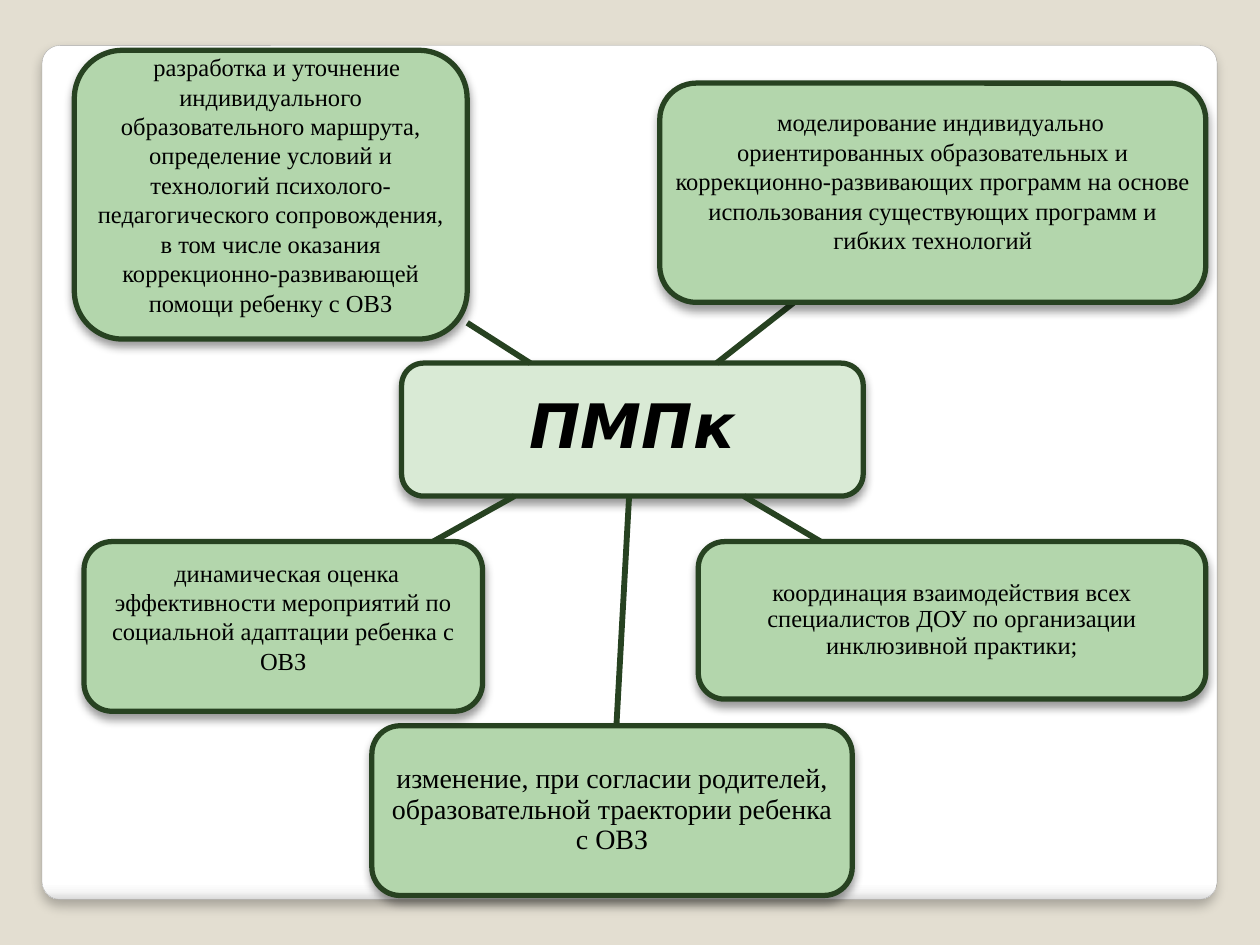
from dataclasses import dataclass

from lxml import etree
from pptx import Presentation
from pptx.dml.color import RGBColor
from pptx.enum.shapes import MSO_CONNECTOR, MSO_SHAPE
from pptx.enum.text import MSO_ANCHOR, PP_ALIGN
from pptx.oxml.ns import qn
from pptx.util import Pt

ROUNDED = MSO_SHAPE.ROUNDED_RECTANGLE
STRAIGHT = MSO_CONNECTOR.STRAIGHT
MIDDLE = MSO_ANCHOR.MIDDLE
CENTER = PP_ALIGN.CENTER


@dataclass(frozen=True)
class Theme:
    background: RGBColor = RGBColor.from_string("E3DED1")
    panel_line: RGBColor = RGBColor.from_string("A4A4A4")
    center: RGBColor = RGBColor.from_string("D9EAD5")
    task: RGBColor = RGBColor.from_string("B3D6AC")
    line: RGBColor = RGBColor.from_string("274221")
    text: RGBColor = RGBColor.from_string("000000")
    panel_stops: tuple = ((0, "FFFFFF"), (98, "FFFFFF"), (99, "F7F7F7"), (100, "DADADA"))
    title_font: str = "DejaVu Sans"
    body_font: str = "Times New Roman"
    title_size: int = 35
    body_size: int = 14
    large_size: int = 16


theme = Theme()


def add_box(left, top, width, height, line, line_width, alpha, blur, dist):
    """Add a rounded box with an outline and a soft shadow below it."""
    sp = slide.shapes.add_shape(ROUNDED, Pt(left), Pt(top), Pt(width), Pt(height))
    sp.line.color.rgb = line
    sp.line.width = Pt(line_width)
    sp.shadow.inherit = False
    effects = sp._element.spPr.find(qn("a:effectLst"))
    shadow = etree.SubElement(effects, qn("a:outerShdw"), blurRad=str(Pt(blur)),
                              dist=str(Pt(dist)), dir="5400000", rotWithShape="0")
    color = etree.SubElement(shadow, qn("a:srgbClr"), val="000000")
    etree.SubElement(color, qn("a:alpha"), val=str(alpha * 1000))
    return sp


def set_text(sp, text, font, size, spacing=1.0, indent=0, bottom=3):
    """Put one centred paragraph into a box."""
    tf = sp.text_frame
    tf.word_wrap = True
    tf.vertical_anchor = MIDDLE
    tf.margin_left = tf.margin_right = tf.margin_top = Pt(2.5)
    tf.margin_bottom = Pt(bottom)
    p = tf.paragraphs[0]
    p.text = text
    p.alignment = CENTER
    p.line_spacing = spacing
    if indent:
        p._p.get_or_add_pPr().set("indent", str(Pt(indent)))
    r = p.runs[0]
    r.font.name = font
    r.font.size = Pt(size)
    r.font.color.rgb = theme.text
    return r


prs = Presentation()
prs.slide_width, prs.slide_height = Pt(720), Pt(540)
slide = prs.slides.add_slide(prs.slide_layouts[6])
slide.background.fill.solid()
slide.background.fill.fore_color.rgb = theme.background

# White panel, shaded along its bottom edge
panel = add_box(24, 26, 671.5, 488, theme.panel_line, 0.16, 25, 6, 4)
panel.adjustments[0] = 0.021
panel.fill.gradient()
panel.fill.gradient_angle = 270
stops = panel._element.spPr.find(qn("a:gradFill")).find(qn("a:gsLst"))
for stop in list(stops):
    stops.remove(stop)
for position, value in theme.panel_stops:
    stop = etree.SubElement(stops, qn("a:gs"), pos=str(position * 1000))
    etree.SubElement(stop, qn("a:srgbClr"), val=value)

# Central box
center = add_box(229.5, 207.5, 263.75, 76, theme.line, 3, 40, 5.2, 3)
center.fill.solid()
center.fill.fore_color.rgb = theme.center
r = set_text(center, "ПМПк", theme.title_font, theme.title_size, spacing=0.9)
r.font.bold = r.font.italic = True

# Spokes from the central box to the tasks
spokes = [
    (303, 207.5, 267, 184.5),
    (409.5, 207.5, 453.5, 173),
    (425, 283.5, 469, 309.5),
    (359.5, 283.5, 352.25, 414.75),
    (294, 283.5, 247.5, 309.5),
]
for x1, y1, x2, y2 in spokes:
    spoke = slide.shapes.add_connector(STRAIGHT, Pt(x1), Pt(y1), Pt(x2), Pt(y2))
    spoke.line.color.rgb = theme.line
    spoke.line.width = Pt(3.35)
    etree.SubElement(spoke._element.spPr, qn("a:effectLst"))

# Task boxes: position, text, size, line spacing, first-line indent, bottom margin
tasks = [
    ((42.5, 28.75, 224.5, 165),
     "разработка и уточнение индивидуального образовательного маршрута, определение "
     "условий и технологий психолого-педагогического сопровождения, в том числе "
     "оказания коррекционно-развивающей помощи ребенку с ОВЗ",
     theme.body_size, 1.0, 7, 14),
    ((377, 47.5, 312, 125.25),
     "моделирование индивидуально ориентированных образовательных и "
     "коррекционно-развивающих программ на основе использования существующих "
     "программ и гибких технологий",
     theme.body_size, 1.0, 9, 16),
    ((399, 309.5, 290, 90),
     "координация взаимодействия всех специалистов ДОУ по организации "
     "инклюзивной практики;",
     theme.body_size, 0.9, 0, 3),
    ((212.5, 414.75, 274.5, 97),
     "изменение, при согласии родителей, образовательной траектории ребенка с ОВЗ",
     theme.large_size, 0.9, 0, 3),
    ((48, 309.5, 227.75, 97),
     "динамическая оценка эффективности мероприятий по социальной адаптации "
     "ребенка с ОВЗ",
     theme.body_size, 1.0, 4, 14),
]
for bounds, text, size, spacing, indent, bottom in tasks:
    sp = add_box(*bounds, theme.line, 3, 40, 5.2, 3)
    sp.fill.solid()
    sp.fill.fore_color.rgb = theme.task
    set_text(sp, text, theme.body_font, size, spacing, indent, bottom)

prs.save("out.pptx")
